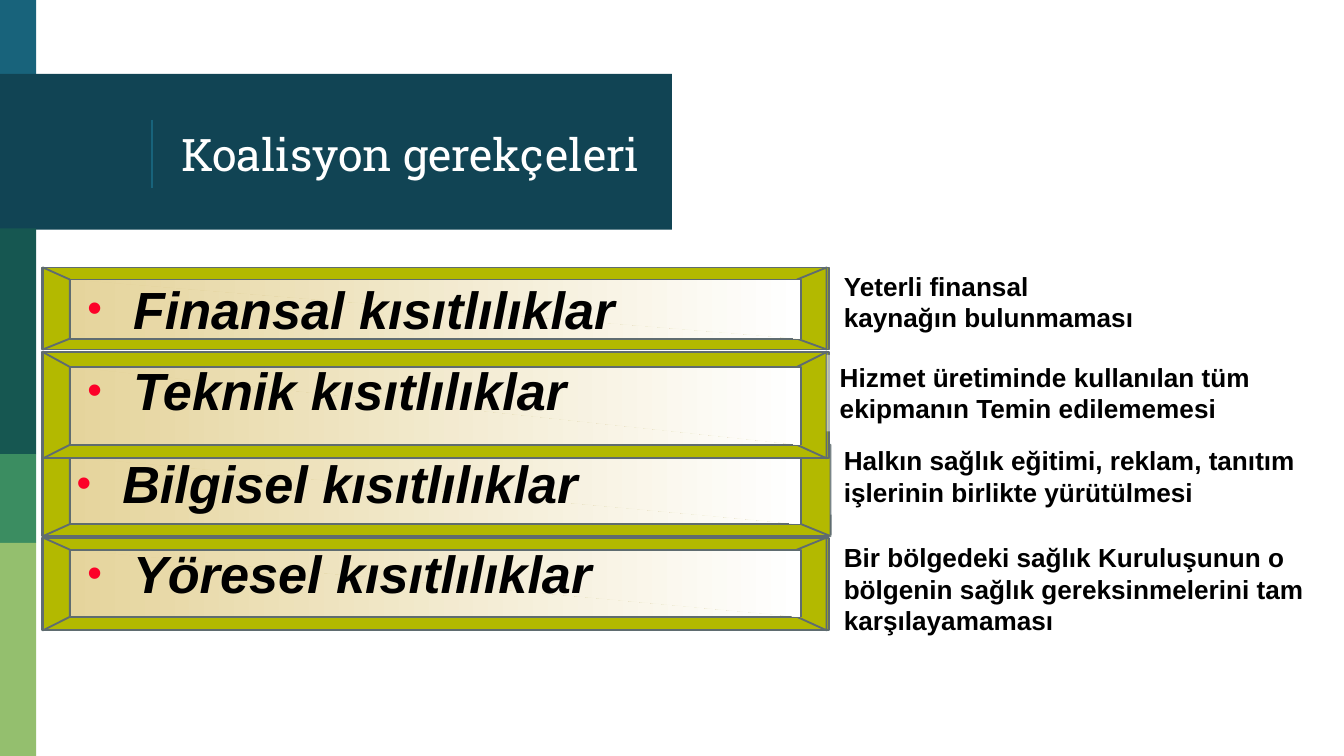
import pptx
import pptx.dml.color
import pptx.enum.shapes
import pptx.enum.text
import pptx.oxml
import pptx.oxml.ns
import pptx.util
from lxml import etree

Inches = pptx.util.Inches
Pt = pptx.util.Pt
COLORS = {
    "blue": "18637B", "navy": "114454", "pine": "165751", "green": "3B8D61",
    "leaf": "94BF6E", "olive": "B3B900", "edge": "5F6C70", "sand": "E5D49C",
    "white": "FFFFFF", "black": "000000", "red": "FC0128",
}
BANDS = [
    (0, 0.27, 0.58, "blue"),
    (0.55, 5, 1.16, "navy"),
    (1.7, 0.27, 1.68, "pine"),
    (3.38, 0.27, 0.66, "green"),
    (4.04, 0.27, 1.59, "leaf"),
]
NOTES = [
    (6.18, 1.96, 2.37, 0.57, ["Yeterli finansal", "kaynağın bulunmaması"], False),
    (6.15, 2.64, 3.34, 0.57,
     ["Hizmet üretiminde kullanılan tüm ekipmanın Temin edilememesi"], True),
    (6.18, 3.26, 3.62, 0.57,
     ["Halkın sağlık eğitimi, reklam, tanıtım işlerinin birlikte yürütülmesi"], True),
    (6.18, 3.98, 3.84, 0.81,
     ["Bir bölgedeki sağlık Kuruluşunun o bölgenin sağlık gereksinmelerini tam "
      "karşılayamaması"], True),
]


def rgb(name):
    return pptx.dml.color.RGBColor.from_string(COLORS[name])


def add_child(parent, tag, **attributes):
    return etree.SubElement(parent, pptx.oxml.ns.qn(tag), attributes)


def add_band(page, top, width, height, color):
    band = page.shapes.add_shape(
        pptx.enum.shapes.MSO_SHAPE.RECTANGLE,
        Inches(0), Inches(top), Inches(width), Inches(height))
    band.shadow.inherit = False
    band.fill.solid()
    band.fill.fore_color.rgb = rgb(color)
    band.line.fill.background()


def add_rule(page, x, top, bottom):
    rule = page.shapes.add_connector(
        pptx.enum.shapes.MSO_CONNECTOR.STRAIGHT,
        Inches(x), Inches(top), Inches(x), Inches(bottom))
    rule.line.color.rgb = rgb("blue")
    rule.line.width = Pt(0.75)
    add_child(rule._element.spPr, "a:effectLst")


def add_text(shapes, left, top, width, height, lines, size, font,
             color="black", bold=True, wrap=True, inset=(0.1, 0.05)):
    box = shapes.add_textbox(Inches(left), Inches(top), Inches(width), Inches(height))
    frame = box.text_frame
    frame.word_wrap = wrap
    frame.margin_left = frame.margin_right = Inches(inset[0])
    frame.margin_top = frame.margin_bottom = Inches(inset[1])
    frame.text = "\n".join(lines)
    for para in frame.paragraphs:
        para.font.size = Pt(size)
        para.font.name = font
        para.font.bold = bold
        para.font.color.rgb = rgb(color)
    return box


def add_title(page, text):
    box = add_text(page.shapes, 1.25, 0.58, 3.83, 1.12, [text], 24, "Roboto Slab",
                   "white", bold=False, inset=(0.1, 0.1))
    box.text_frame.vertical_anchor = pptx.enum.text.MSO_ANCHOR.MIDDLE


def add_facet(shapes, points, gradient=False, close=True):
    corners = [(Inches(x), Inches(y)) for x, y in points]
    builder = shapes.build_freeform(*corners[0])
    builder.add_line_segments(corners[1:], close=close)
    facet = builder.convert_to_shape()
    facet.shadow.inherit = False
    facet.line.color.rgb = rgb("edge")
    facet.line.width = Pt(1)
    if gradient:
        facet.fill.gradient()
        facet.fill.gradient_angle = 0
        for stop, position, color in zip(
                facet.fill.gradient_stops, (0, 1), ("sand", "white")):
            stop.position = position
            stop.color.rgb = rgb(color)
    else:
        facet.fill.solid()
        facet.fill.fore_color.rgb = rgb("olive")


def add_panel(page, top, bottom, inner_top, inner_bottom, right=6.15):
    group = page.shapes.add_group_shape()
    shapes = group.shapes
    inner_right = right - 0.22
    add_facet(shapes, [(0.31, top), (0.31, bottom), (6.17, bottom), (6.17, top)])
    add_facet(shapes, [(0.32, bottom), (0.52, inner_bottom), (0.52, inner_top), (0.32, top)])
    add_facet(shapes, [(0.52, inner_top), (0.52, inner_bottom),
                       (5.97, inner_bottom), (5.97, inner_top)], gradient=True)
    add_facet(shapes, [(right, bottom), (inner_right, inner_bottom),
                       (inner_right, inner_top), (right, top)])
    add_facet(shapes, [(0.53, inner_top), (5.96, inner_top), (5.96, inner_bottom)],
              gradient=True, close=False)
    return group


def add_heading(shapes, left, top, width, height, text):
    box = add_text(shapes, left, top, width, height, [text], 28, "Arial",
                   wrap=False, inset=(0.09, 0.05))
    para = box.text_frame.paragraphs[0]
    para.font.italic = True
    para.space_before = Pt(3)
    properties = para._p.get_or_add_pPr()
    properties.set("marL", str(Inches(0.34)))
    properties.set("indent", str(Inches(-0.34)))
    defaults = properties.find(pptx.oxml.ns.qn("a:defRPr"))
    bullet_color = add_child(properties, "a:buClr")
    add_child(bullet_color, "a:srgbClr", val=COLORS["red"])
    add_child(properties, "a:buSzPct", val="80000")
    add_child(properties, "a:buFont", typeface="Arial")
    add_child(properties, "a:buChar", char="•")
    properties.append(defaults)


def add_note(page, left, top, width, height, lines, wrap):
    box = add_text(page.shapes, left, top, width, height, lines, 14, "Arial", wrap=wrap)
    box.text_frame.auto_size = pptx.enum.text.MSO_AUTO_SIZE.SHAPE_TO_FIT_TEXT
    box.fill.solid()
    box.fill.fore_color.rgb = rgb("white")
    tint = box._element.spPr.find(".//" + pptx.oxml.ns.qn("a:srgbClr"))
    add_child(tint, "a:alpha", val="50000")


def main():
    deck = pptx.Presentation()
    deck.slide_width = Inches(10)
    deck.slide_height = deck.slide_width * 9 // 16
    page = deck.slides.add_slide(deck.slide_layouts[6])
    for band in BANDS:
        add_band(page, *band)
    add_rule(page, 1.13, 0.89, 1.4)
    add_title(page, "Koalisyon gerekçeleri")

    add_panel(page, 3.31, 3.99, 3.4, 3.9, right=6.18)
    financial = add_panel(page, 1.99, 2.6, 2.08, 2.52)
    add_heading(financial.shapes, 0.56, 2.01, 4.16, 0.71, "Finansal kısıtlılıklar")
    technical = add_panel(page, 2.62, 3.41, 2.73, 3.31)
    add_heading(technical.shapes, 0.56, 2.62, 3.81, 0.93, "Teknik kısıtlılıklar")
    add_heading(page.shapes, 0.48, 3.31, 3.96, 0.57, "Bilgisel kısıtlılıklar")
    regional = add_panel(page, 4, 4.69, 4.09, 4.59)
    add_heading(regional.shapes, 0.56, 3.98, 3.98, 0.81, "Yöresel kısıtlılıklar")

    for note in NOTES:
        add_note(page, *note)
    deck.save("out.pptx")


if __name__ == "__main__":
    main()
